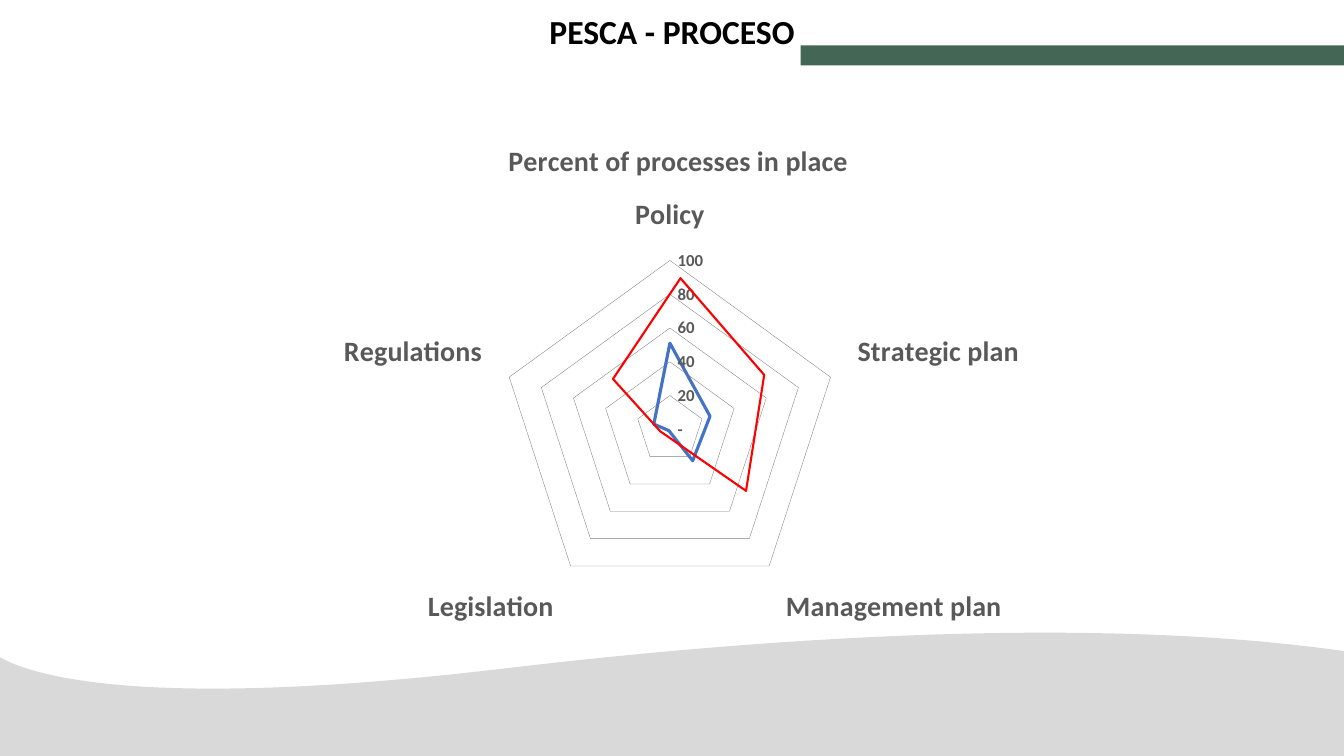
from pptx import Presentation
from pptx import util as u
from pptx.chart.data import CategoryChartData
from pptx.dml.color import RGBColor
from pptx.enum import chart as charts, shapes, text

COLORS = {
    "title": "000000", "label": "595959", "wave": "D9D9D9", "bar": "436655",
    "grid": "808080", "process": "4472C4", "target": "FF0000",
}
PROCESSES = {
    "Policy": 51, "Strategic plan": 25, "Management plan": 23,
    "Legislation": 1, "Regulations": 10,
}
MEASURE = "Percent of processes in place "
NUMBER_FORMAT = r'_(* #,##0_);_(* \(#,##0\);_(* "-"??_);_(@_)'
TARGET = [(6.75, 2.76), (6.08, 3.76), (6.55, 4.28), (7.4, 4.87), (7.58, 3.72)]
WAVE_CURVES = [
    [(13.33, 6.46), (11.65, 6.22), (9.02, 6.16), (5.02, 6.63)],
    [(5.02, 6.63), (1.33, 7.07), (0.26, 6.68), (-0.02, 6.51)],
]


def color(name):
    """Return the named colour."""
    return RGBColor.from_string(COLORS[name])


def style_font(font, size, ink, bold=True):
    """Apply the deck's typeface with a size and colour."""
    font.name = "Calibri"
    font.size = u.Pt(size)
    font.bold = bold
    font.color.rgb = color(ink)


def write(frame, content, size, ink, bold=True, align=text.PP_ALIGN.CENTER):
    """Write one formatted paragraph into a text frame."""
    paragraph = frame.paragraphs[0]
    paragraph.alignment = align
    run = paragraph.add_run()
    run.text = content
    style_font(run.font, size, ink, bold)


def bezier(curve, steps=40):
    """Return points along a cubic curve, without its first point."""
    points = []
    for step in range(1, steps + 1):
        t = step / steps
        weights = ((1 - t) ** 3, 3 * t * (1 - t) ** 2, 3 * t * t * (1 - t), t ** 3)
        points.append(tuple(sum(w * p[axis] for w, p in zip(weights, curve))
                            for axis in (0, 1)))
    return points


class SlideBuilder:
    """Hold the current slide and add styled elements to it."""

    def __init__(self, slide):
        self.slide = slide

    def paint(self, shape, fill=None, line=None, width=1.5):
        """Set fill and outline, leaving out whichever is not named."""
        shape.shadow.inherit = False
        if fill:
            shape.fill.solid()
            shape.fill.fore_color.rgb = color(fill)
        else:
            shape.fill.background()
        if line:
            shape.line.color.rgb = color(line)
            shape.line.width = u.Pt(width)
        else:
            shape.line.fill.background()

    def title(self, content, box):
        """Move and fill the title placeholder."""
        title = self.slide.shapes.title
        title.left, title.top, title.width, title.height = map(u.Inches, box)
        title.text_frame.word_wrap = True
        title.text_frame.vertical_anchor = text.MSO_ANCHOR.TOP
        write(title.text_frame, content, size=24, ink="title")

    def bar(self, box, fill):
        """Add a plain rectangle."""
        bar = self.slide.shapes.add_shape(
            shapes.MSO_SHAPE.RECTANGLE, *map(u.Inches, box))
        self.paint(bar, fill=fill)

    def outline(self, points, **style):
        """Add a closed freeform through the points."""
        start, *others = [(u.Inches(x), u.Inches(y)) for x, y in points]
        builder = self.slide.shapes.build_freeform(*start)
        builder.add_line_segments(others, close=True)
        self.paint(builder.convert_to_shape(), **style)

    def radar(self, box, name, values):
        """Add a radar chart with one series."""
        data = CategoryChartData(number_format=NUMBER_FORMAT)
        data.categories = list(values)
        data.add_series(name, list(values.values()))
        chart = self.slide.shapes.add_chart(
            charts.XL_CHART_TYPE.RADAR, *map(u.Inches, box), data).chart
        style_font(chart.font, 10, "title", bold=False)
        chart.has_legend = False
        chart.has_title = True
        chart.chart_title.include_in_layout = False
        write(chart.chart_title.text_frame, name, size=20, ink="label")

        for axis, size in ((chart.category_axis, 20), (chart.value_axis, 12)):
            axis.major_tick_mark = axis.minor_tick_mark = charts.XL_TICK_MARK.NONE
            style_font(axis.tick_labels.font, size, "label")
        chart.category_axis.has_major_gridlines = False
        chart.category_axis.format.line.color.rgb = color("wave")
        chart.category_axis.format.line.width = u.Pt(0.75)

        scale = chart.value_axis
        scale.minimum_scale, scale.maximum_scale, scale.major_unit = 0, 100, 20
        scale.tick_labels.number_format = NUMBER_FORMAT
        scale.tick_labels.number_format_is_linked = False
        scale.format.line.fill.background()
        scale.has_major_gridlines = True
        scale.major_gridlines.format.line.color.rgb = color("grid")
        scale.major_gridlines.format.line.width = u.Pt(0.25)

        plot = chart.plots[0]
        plot.vary_by_categories = False
        series = plot.series[0]
        series.smooth = False
        series.marker.style = charts.XL_MARKER_STYLE.NONE
        series.format.line.color.rgb = color("process")
        series.format.line.width = u.Pt(2.25)


def main():
    """Build and save the slide."""
    deck = Presentation()
    deck.slide_width, deck.slide_height = u.Inches(13.33), u.Inches(7.5)
    page = SlideBuilder(deck.slides.add_slide(deck.slide_layouts[5]))
    wave = [(13.33, 7.5), WAVE_CURVES[0][0]]
    for curve in WAVE_CURVES:
        wave += bezier(curve)
    page.outline(wave + [(-0.02, 7.5)], fill="wave")
    page.bar((7.94, 0.45, 5.4, 0.2), fill="bar")
    page.title("PESCA - PROCESO", (0, 0.06, 13.33, 0.5))
    page.radar((2.51, 1.19, 8.5, 5.1), MEASURE, PROCESSES)
    page.outline(TARGET, line="target")
    deck.save("out.pptx")


if __name__ == "__main__":
    main()
